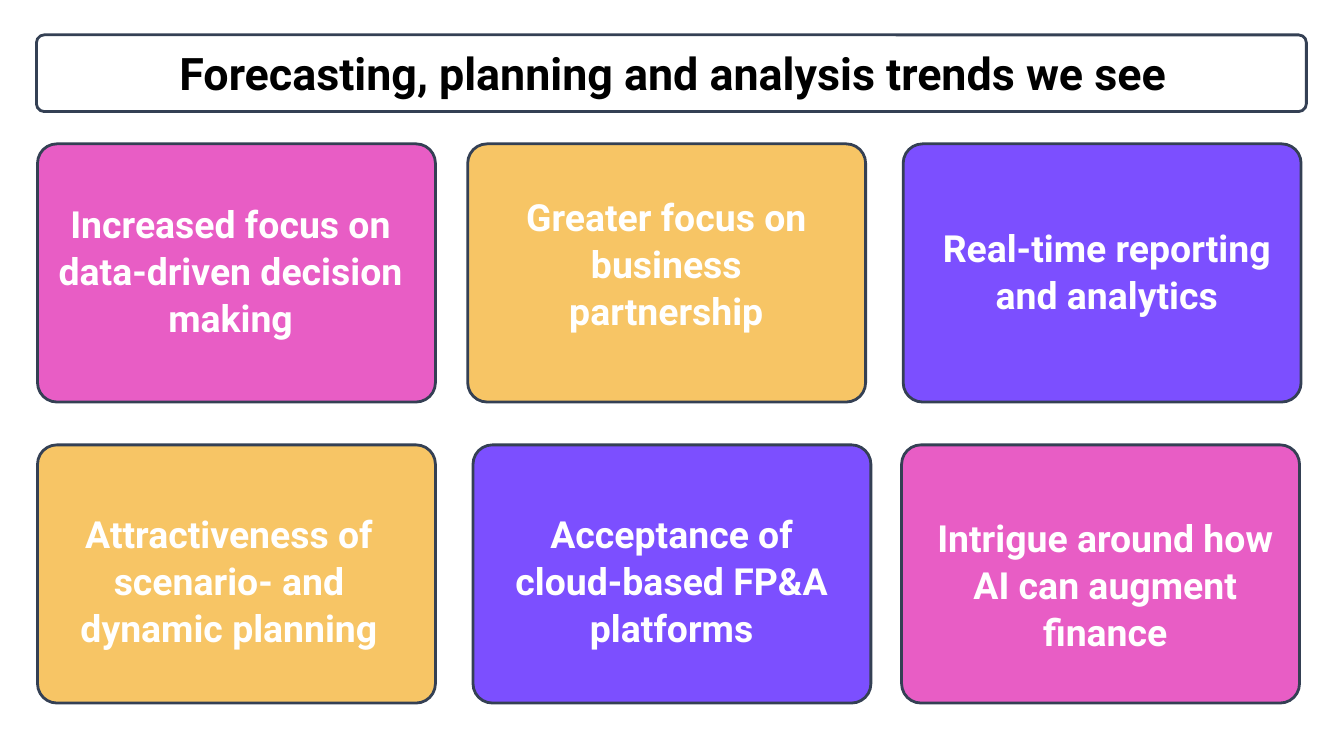
from pptx import Presentation
from pptx.dml.color import RGBColor
from pptx.enum.shapes import MSO_SHAPE
from pptx.enum.text import MSO_ANCHOR, PP_ALIGN
from pptx.util import Cm, Pt

PINK, YELLOW, VIOLET = "E85DC5", "F7C565", "7C4FFF"
WHITE, BLACK, OUTLINE = "FFFFFF", "000000", "344054"
CARD_WIDTH, CARD_HEIGHT = 7.52, 4.88
LABEL_HEIGHT = 0.89

# Row top, then its cards:
# left, fill, label, label's shift right, label's shift down, label width
ROWS = [
    (2.72, [
        (0.71, PINK, "Increased focus on data-driven decision making", -0.2, -0.06, 7.7),
        (8.84, YELLOW, "Greater focus on business partnership", 0.2, -0.19, 7.11),
        (17.07, VIOLET, "Real-time reporting and analytics", 0, -0.06, 7.7),
    ]),
    (8.41, [
        (0.71, YELLOW, "Attractiveness of scenario- and dynamic planning", -0.23, 0.11, 7.7),
        (8.94, VIOLET, "Acceptance of cloud-based FP&A platforms", 0.2, 0.11, 7.11),
        (17.04, PINK, "Intrigue around how AI can augment finance", 0, 0.17, 7.7),
    ]),
]


def color(hex_value):
    return RGBColor.from_string(hex_value)


def add_panel(slide, box, fill, corner):
    panel = slide.shapes.add_shape(MSO_SHAPE.ROUNDED_RECTANGLE, *map(Cm, box))
    panel.adjustments[0] = corner
    panel.shadow.inherit = False
    panel.fill.solid()
    panel.fill.fore_color.rgb = color(fill)
    panel.line.color.rgb = color(OUTLINE)
    panel.line.width = Pt(1.5)


def add_label(slide, box, text, size, ink, anchor, spacing):
    frame = slide.shapes.add_textbox(*map(Cm, box)).text_frame
    frame_format = {"word_wrap": True, "vertical_anchor": anchor}
    for side in ("left", "top", "right", "bottom"):
        frame_format[f"margin_{side}"] = Cm(0.25)
    for name, value in frame_format.items():
        setattr(frame, name, value)
    paragraph = frame.paragraphs[0]
    paragraph.alignment = PP_ALIGN.CENTER
    paragraph.line_spacing = spacing
    run = paragraph.add_run()
    run.text = text
    for name, value in {"name": "Roboto", "size": Pt(size), "bold": True}.items():
        setattr(run.font, name, value)
    run.font.color.rgb = color(ink)


def add_heading(slide, box):
    left, top, width, height = box
    add_panel(slide, box, WHITE, 0.102)
    add_label(slide, (left + 0.1, top - 0.05, width - 0.15, height + 1.12),
              "Forecasting, planning and analysis trends we see",
              24, BLACK, MSO_ANCHOR.TOP, 1.0)


def add_trend_card(slide, box, fill, text, shift_x, shift_y, label_width):
    left, top, width, height = box
    add_panel(slide, box, fill, 0.075)
    label_top = top + (height - LABEL_HEIGHT) / 2 + shift_y
    add_label(slide, (left + shift_x, label_top, label_width, LABEL_HEIGHT),
              text, 20, WHITE, MSO_ANCHOR.MIDDLE, 1.05)


def main():
    deck = Presentation()
    deck.slide_width, deck.slide_height = Cm(25.4), Cm(14.29)
    slide = deck.slides.add_slide(deck.slide_layouts[6])

    # Heading
    add_heading(slide, (0.69, 0.66, 24, 1.45))

    # Two rows of trend cards
    for top, cards in ROWS:
        for left, *content in cards:
            add_trend_card(slide, (left, top, CARD_WIDTH, CARD_HEIGHT), *content)

    deck.save("out.pptx")


if __name__ == "__main__":
    main()
